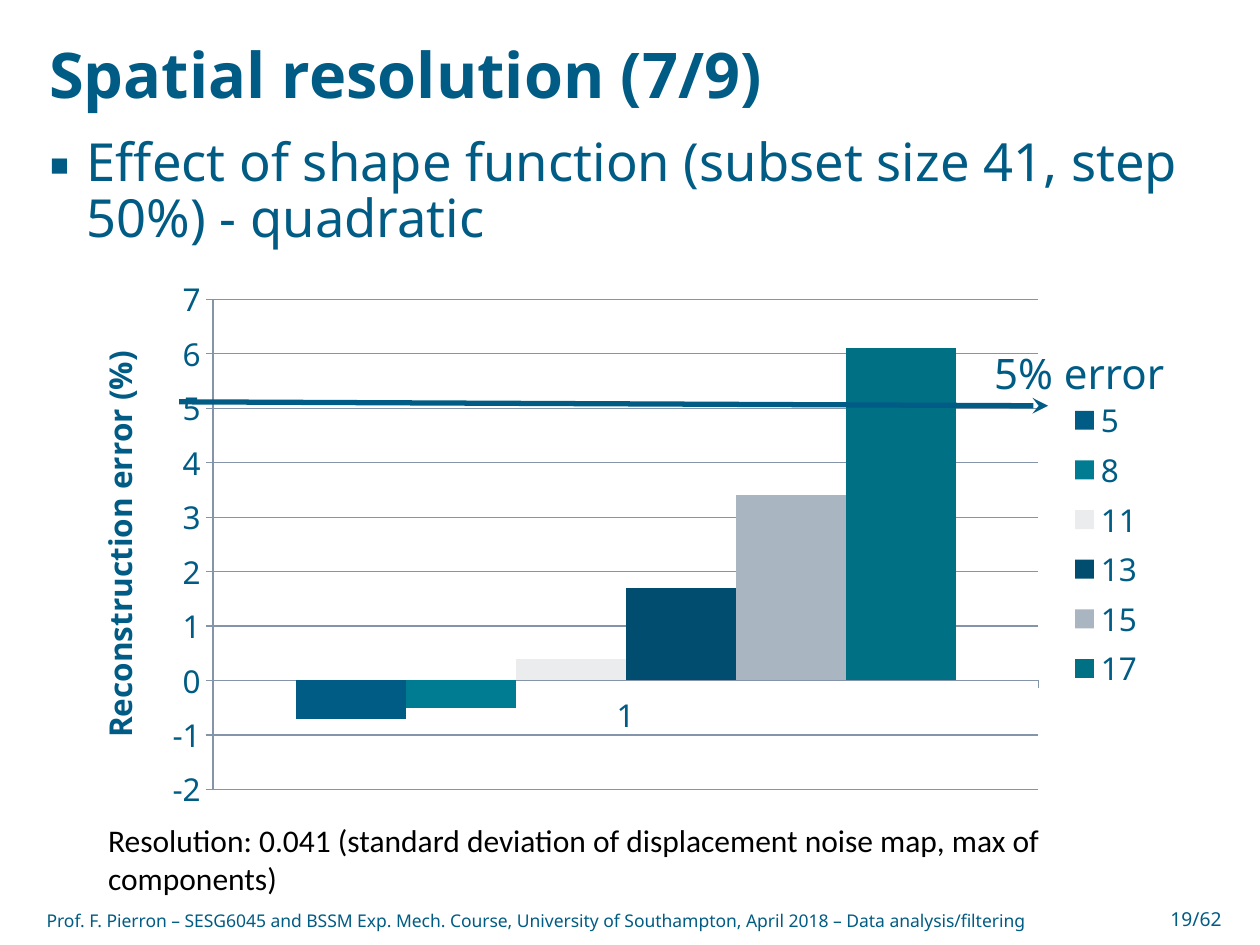
from dataclasses import dataclass
from lxml import etree
from pptx import Presentation
from pptx import util as u
from pptx.chart.data import CategoryChartData
from pptx.dml.color import RGBColor
from pptx.enum import chart as charts, shapes, text
from pptx.oxml import parse_xml
from pptx.oxml.ns import nsdecls, qn


@dataclass(frozen=True)
class Theme:
    font: str = "Noto Sans"
    caption_font: str = "Calibri"
    blue: str = "005C84"
    black: str = "000000"
    grid: str = "8494A9"
    title: int = 36
    body: int = 30
    callout: int = 24
    chart: int = 18
    footer: int = 10
    number: int = 11


@dataclass(frozen=True)
class Box:
    left: float
    top: float
    width: float
    height: float

    def lengths(self) -> list:
        return [u.Cm(value) for value in (self.left, self.top, self.width, self.height)]


@dataclass(frozen=True)
class Label:
    words: str
    box: Box
    size: int
    font: str
    color: str
    inset: bool = False
    wrap: bool = True
    align: text.PP_ALIGN = text.PP_ALIGN.LEFT


@dataclass(frozen=True)
class Bar:
    name: str
    error: float
    color: str


THEME = Theme()

BARS = [
    Bar("5", -0.7, "005C84"),
    Bar("8", -0.5, "007C92"),
    Bar("11", 0.4, "EAECEE"),
    Bar("13", 1.7, "004D70"),
    Bar("15", 3.4, "AAB5C2"),
    Bar("17", 6.1, "007084"),
]

FOOTERS = [
    Label("Prof. F. Pierron – SESG6045 and BSSM Exp. Mech. Course, University of Southampton, "
          "April 2018 – Data analysis/filtering",
          Box(0.94, 18.19, 21.31, 0.58), THEME.footer, THEME.font, THEME.blue),
    Label("19/62", Box(22.5, 18.24, 2.13, 0.51), THEME.number, THEME.font, THEME.blue,
          align=text.PP_ALIGN.RIGHT),
]

ANNOTATIONS = [
    Label("Resolution: 0.041 (standard deviation of displacement noise map, max of components)",
          Box(1.93, 16.43, 21.95, 1.8), THEME.chart, THEME.caption_font, THEME.black, inset=True),
    Label("5% error", Box(19.79, 6.88, 3.96, 1.27), THEME.callout, THEME.font, THEME.blue,
          inset=True, wrap=False),
]


def style_font(font, size: int, color: str, name: str = THEME.font, bold: bool = False) -> None:
    font.name = name
    font.size = u.Pt(size)
    font.bold = bold
    font.color.rgb = RGBColor.from_string(color)


def clear_insets(frame) -> None:
    frame.margin_left = frame.margin_right = frame.margin_top = frame.margin_bottom = 0


def fill_placeholder(shape, words: str, box: Box, size: int, anchor, bold: bool = False):
    shape.left, shape.top, shape.width, shape.height = box.lengths()
    frame = shape.text_frame
    frame.text = words
    frame.auto_size = text.MSO_AUTO_SIZE.NONE
    frame.vertical_anchor = anchor
    clear_insets(frame)
    paragraph = frame.paragraphs[0]
    paragraph.alignment = text.PP_ALIGN.LEFT
    paragraph.space_before = u.Pt(0)
    style_font(paragraph.runs[0].font, size, THEME.blue, bold=bold)
    return paragraph


def add_bullet(paragraph, indent: float) -> None:
    properties = paragraph._p.get_or_add_pPr()
    properties.set("marL", str(u.Cm(indent)))
    properties.set("indent", str(-u.Cm(indent)))
    color = etree.SubElement(properties, qn("a:buClr"))
    etree.SubElement(color, qn("a:srgbClr"), val=THEME.blue)
    etree.SubElement(properties, qn("a:buFont"), typeface=THEME.font)
    etree.SubElement(properties, qn("a:buChar"), char="▪")


def add_label(slide, label: Label) -> None:
    frame = slide.shapes.add_textbox(*label.box.lengths()).text_frame
    frame.text = label.words
    frame.word_wrap = label.wrap
    if label.inset:
        frame.auto_size = text.MSO_AUTO_SIZE.SHAPE_TO_FIT_TEXT
    else:
        clear_insets(frame)
        frame.vertical_anchor = text.MSO_ANCHOR.BOTTOM
    paragraph = frame.paragraphs[0]
    paragraph.alignment = label.align
    style_font(paragraph.runs[0].font, label.size, label.color, label.font)


def style_line(line, color: str, width: float) -> None:
    line.color.rgb = RGBColor.from_string(color)
    line.width = u.Pt(width)


def place_plot(chart, x: float, y: float, width: float, height: float) -> None:
    plot_area = chart._chartSpace.chart.plotArea
    for layout in plot_area.findall(qn("c:layout")):
        plot_area.remove(layout)
    plot_area.insert(0, parse_xml(
        f'<c:layout {nsdecls("c")}><c:manualLayout><c:layoutTarget val="inner"/>'
        f'<c:xMode val="edge"/><c:yMode val="edge"/><c:x val="{x}"/><c:y val="{y}"/>'
        f'<c:w val="{width}"/><c:h val="{height}"/></c:manualLayout></c:layout>'))


def add_error_chart(slide, box: Box) -> None:
    data = CategoryChartData()
    data.categories = ["1"]
    for bar in BARS:
        data.add_series(bar.name, [bar.error])
    chart = slide.shapes.add_chart(
        charts.XL_CHART_TYPE.COLUMN_CLUSTERED, *box.lengths(), data).chart
    style_font(chart.font, THEME.chart, THEME.blue)
    chart.has_title = False
    chart.has_legend = True
    chart.legend.position = charts.XL_LEGEND_POSITION.RIGHT
    chart.legend.include_in_layout = False

    plot = chart.plots[0]
    plot.gap_width = 150
    plot.overlap = 0
    plot.vary_by_categories = False
    for series, bar in zip(plot.series, BARS):
        series.invert_if_negative = False
        series.format.fill.solid()
        series.format.fill.fore_color.rgb = RGBColor.from_string(bar.color)

    values = chart.value_axis
    values.minimum_scale, values.maximum_scale, values.major_unit = -2, 7, 1
    values.has_major_gridlines = True
    values.axis_title.text_frame.text = "Reconstruction error (%)"
    title_run = values.axis_title.text_frame.paragraphs[0].runs[0]
    style_font(title_run.font, THEME.chart, THEME.blue, bold=True)
    style_line(values.major_gridlines.format.line, THEME.grid, 0.75)
    for axis in (values, chart.category_axis):
        axis.major_tick_mark = charts.XL_TICK_MARK.OUTSIDE
        style_line(axis.format.line, THEME.grid, 0.75)
    place_plot(chart, 0.13, 0.06, 0.76, 0.88)


def add_threshold_arrow(slide) -> None:
    arrow = slide.shapes.add_connector(
        shapes.MSO_CONNECTOR.STRAIGHT, u.Cm(3.61), u.Cm(8.1), u.Cm(21.13), u.Cm(8.18))
    style_line(arrow.line, THEME.blue, 3)
    etree.SubElement(arrow.line._get_or_add_ln(), qn("a:tailEnd"), type="stealth")
    etree.SubElement(arrow._element.spPr, qn("a:effectLst"))


def main() -> None:
    presentation = Presentation()
    presentation.slide_width, presentation.slide_height = u.Cm(25.4), u.Cm(19.05)
    slide = presentation.slides.add_slide(presentation.slide_layouts[1])
    fill_placeholder(slide.shapes.title, "Spatial resolution (7/9)",
                     Box(0.99, 0, 23.62, 2.24), THEME.title, text.MSO_ANCHOR.BOTTOM, bold=True)
    topic = fill_placeholder(
        slide.placeholders[1], "Effect of shape function (subset size 41, step 50%) - quadratic",
        Box(0.99, 2.74, 23.65, 15.21), THEME.body, text.MSO_ANCHOR.TOP)
    topic.line_spacing = 0.9
    add_bullet(topic, 0.76)
    add_error_chart(slide, Box(1.45, 5.36, 21.89, 11.23))
    add_threshold_arrow(slide)
    for label in ANNOTATIONS + FOOTERS:
        add_label(slide, label)
    presentation.save("out.pptx")


if __name__ == "__main__":
    main()
